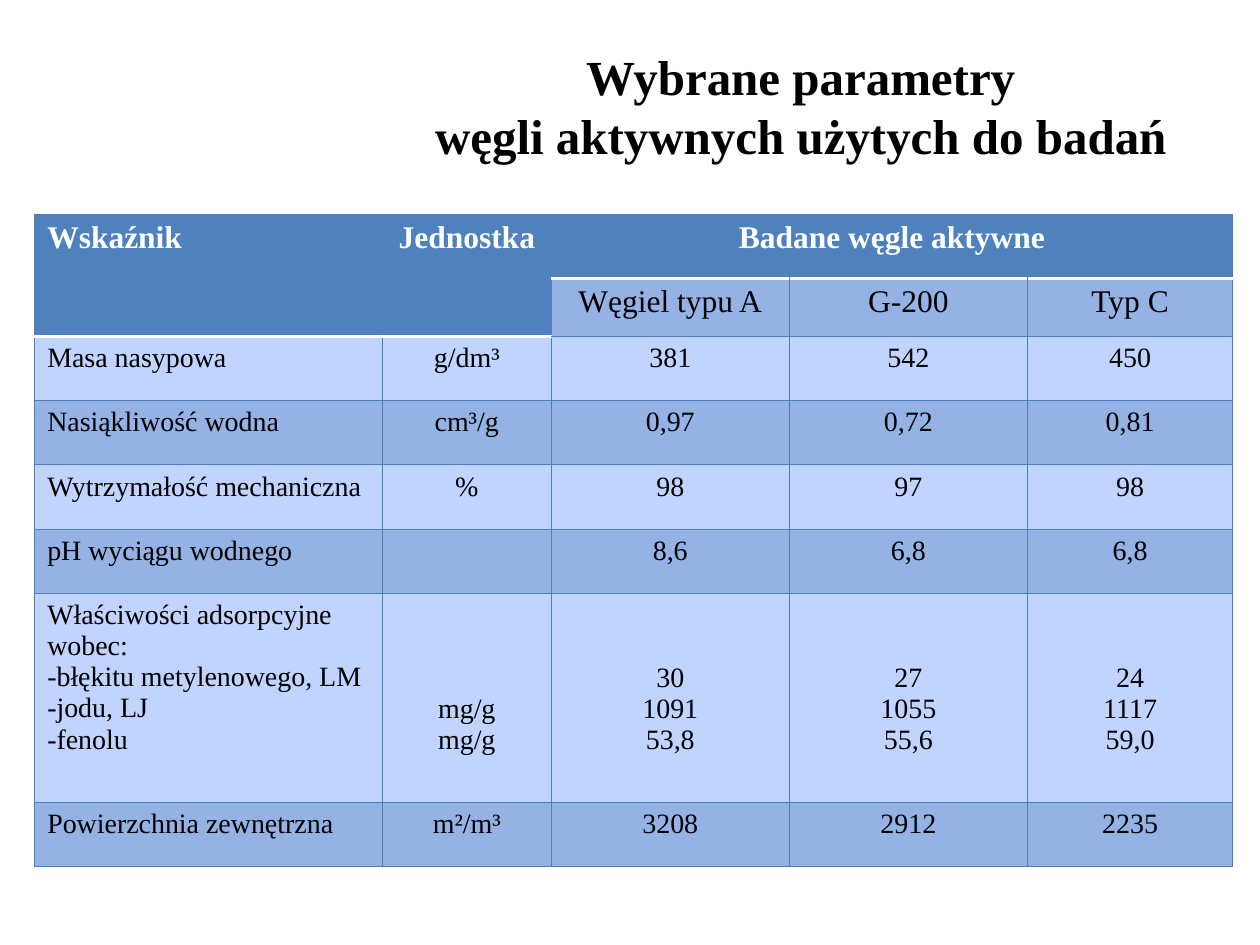
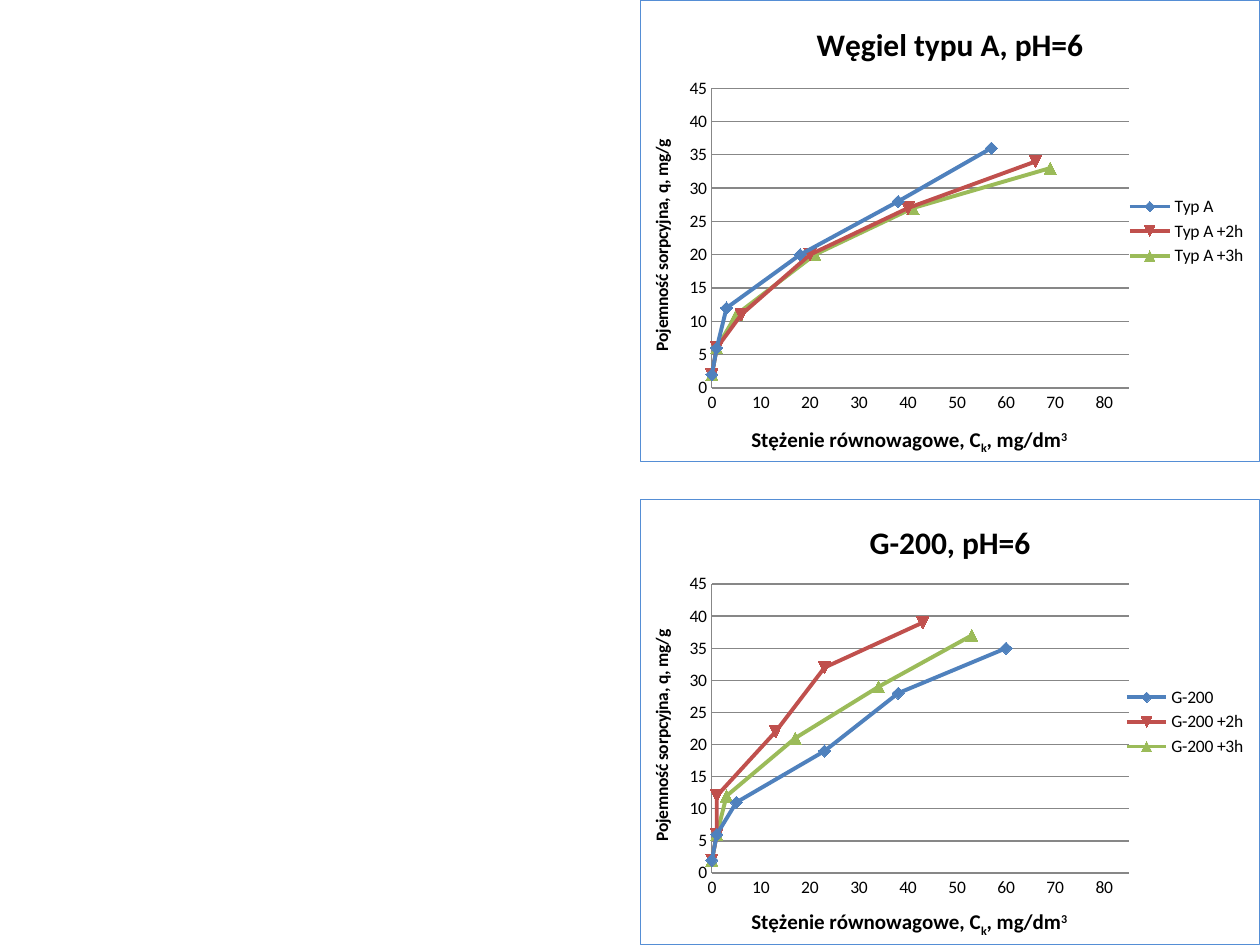
from lxml import etree
from pptx import Presentation
from pptx import util as u
from pptx.chart.data import XyChartData
from pptx.dml.color import RGBColor
from pptx.enum import chart as charts, text
from pptx.oxml import parse_xml
from pptx.oxml.ns import nsdecls, qn

BLACK = RGBColor(0x00, 0x00, 0x00)
WHITE = RGBColor(0xFF, 0xFF, 0xFF)
BLUE = RGBColor(0x4F, 0x81, 0xBD)
RED = RGBColor(0xC0, 0x50, 0x4D)
GREEN = RGBColor(0x9B, 0xBB, 0x59)
LIGHT_BAND = RGBColor(0xC0, 0xD4, 0xFF)
DARK_BAND = RGBColor(0x94, 0xB2, 0xE4)
CELL_LINE = RGBColor(0x4B, 0x7E, 0xBC)
CHART_LINE = RGBColor(0x55, 0x8E, 0xD5)
GRID_LINE = RGBColor(0x87, 0x87, 0x87)
SERIF, SANS = "Times New Roman", "Calibri"
CENTER, LEFT = text.PP_ALIGN.CENTER, text.PP_ALIGN.LEFT

CARBONS = ["Węgiel typu A", "G-200", "Typ C"]
COLUMN_WIDTHS = [27.6, 13.4, 18.9, 18.9, 16.3]
ROW_HEIGHTS = [5.1, 4.6, 5.1, 5.1, 5.1, 5.1, 16.6, 5.1]
LINE_HEIGHT = 2.48
PARAMETERS = [
    ["Masa nasypowa", "g/dm³", "381", "542", "450"],
    ["Nasiąkliwość wodna", "cm³/g", "0,97", "0,72", "0,81"],
    ["Wytrzymałość mechaniczna", "%", "98", "97", "98"],
    ["pH wyciągu wodnego", "", "8,6", "6,8", "6,8"],
    ["Właściwości adsorpcyjne wobec:\n-błękitu metylenowego, LM\n-jodu, LJ\n-fenolu",
     "mg/g\nmg/g", "30\n1091\n53,8", "27\n1055\n55,6", "24\n1117\n59,0"],
    ["Powierzchnia zewnętrzna", "m²/m³", "3208", "2912", "2235"],
]
ADSORPTION_LINES = 5

CONCENTRATION = [("Stężenie równowagowe, C", 0), ("k", -25000),
                 (", mg/dm", 0), ("3", 30000)]
CAPACITY = "Pojemność sorpcyjna, q, mg/g"
ISOTHERMS = {
    "Typ A": [([0, 1, 3, 18, 38, 57], [2, 6, 12, 20, 28, 36]),
              ([0, 1, 6, 20, 40, 66], [2, 6, 11, 20, 27, 34]),
              ([0, 1, 5, 21, 41, 69], [2, 6, 11, 20, 27, 33])],
    "G-200": [([0, 1, 5, 23, 38, 60], [2, 6, 11, 19, 28, 35]),
              ([0, 1, 1, 13, 23, 43], [2, 6, 12, 22, 32, 39]),
              ([0, 1, 3, 17, 34, 53], [2, 6, 12, 21, 29, 37])],
}


def grid(*units):
    """Lengths on a grid of 100 columns by 75 rows."""
    return [u.Inches(unit / 10) for unit in units]


def write(frame, lines, size=16, bold=False, color=BLACK, align=CENTER, font=SERIF):
    """Fill a frame; a line is a string or a list of (words, baseline shift)."""
    for index, line in enumerate(lines):
        para = frame.add_paragraph() if index else frame.paragraphs[0]
        para.alignment = align
        if isinstance(line, str):
            para.text = line
        else:
            for words, shift in line:
                span = para.add_run()
                span.text = words
                if shift:
                    span.font._element.set("baseline", str(shift))
        for span in para.runs:
            span.font.size, span.font.bold = u.Pt(size), bold
            span.font.name = font
            span.font.color.rgb = color


def add_title(page, words):
    box = page.shapes.add_textbox(*grid(27.2, 2.1, 72.7, 12.5))
    box.text_frame.word_wrap = True
    box.text_frame.vertical_anchor = text.MSO_ANCHOR.MIDDLE
    write(box.text_frame, [words], size=28, bold=True)


def set_borders(cell, top_white, bottom_white):
    properties = cell._tc.get_or_add_tcPr()
    edges = [("L", False), ("R", False), ("T", top_white), ("B", bottom_white)]
    for index, (side, white) in enumerate(edges):
        color, width = (WHITE, u.Pt(2)) if white else (CELL_LINE, u.Pt(0.75))
        properties.insert(index, parse_xml(
            f'<a:ln{side} {nsdecls("a")} w="{int(width)}"><a:solidFill>'
            f'<a:srgbClr val="{color}"/></a:solidFill></a:ln{side}>'))


def ends_header(row, column):
    return row == 0 or (row == 1 and column < 2)


def add_parameter_table(page):
    rows = [["Wskaźnik", "Jednostka", "Badane węgle aktywne", "", ""],
            ["", ""] + CARBONS] + PARAMETERS
    table = page.shapes.add_table(
        len(rows), len(COLUMN_WIDTHS),
        *grid(2.75, 17, sum(COLUMN_WIDTHS), sum(ROW_HEIGHTS))).table
    for column, width in zip(table.columns, grid(*COLUMN_WIDTHS)):
        column.width = width
    for row, height in zip(table.rows, grid(*ROW_HEIGHTS)):
        row.height = height
    for r, row in enumerate(rows):
        for c, words in enumerate(row):
            cell = table.cell(r, c)
            header = ends_header(r, c)
            cell.fill.solid()
            cell.fill.fore_color.rgb = (
                BLUE if header else DARK_BAND if r % 2 else LIGHT_BAND)
            set_borders(cell, r > 0 and ends_header(r - 1, c), header)
            if not words:
                continue
            lines = words.split("\n")
            write(cell.text_frame, lines, size=18 if r < 2 else 16, bold=header,
                  color=WHITE if header else BLACK, align=CENTER if c else LEFT)
            if c and len(lines) > 1:
                skipped = ADSORPTION_LINES - len(lines)
                cell.margin_top, = grid(0.5 + skipped * LINE_HEIGHT)
    for column in (0, 1):
        table.cell(0, column).merge(table.cell(1, column))
    table.cell(0, 2).merge(table.cell(0, 4))


def style_axis(axis, title, size, maximum, step):
    axis.minimum_scale, axis.maximum_scale = 0, maximum
    axis.major_unit = step
    axis.major_tick_mark = axis.minor_tick_mark = charts.XL_TICK_MARK.NONE
    axis.tick_labels.number_format = "0"
    axis.tick_labels.number_format_is_linked = False
    axis.format.line.color.rgb = GRID_LINE
    write(axis.axis_title.text_frame, [title], size=size, bold=True, font=SANS)


def frame_chart(chart):
    """Give the chart area its fill and border and the plot its fixed place."""
    space = chart._chartSpace
    space.find(qn("c:chart")).addnext(parse_xml(
        f'<c:spPr {nsdecls("c", "a")}><a:solidFill><a:srgbClr val="{WHITE}"/>'
        f'</a:solidFill><a:ln w="{int(u.Pt(0.75))}"><a:solidFill>'
        f'<a:srgbClr val="{CHART_LINE}"/></a:solidFill></a:ln></c:spPr>'))
    plot_area = space.find(qn("c:chart")).find(qn("c:plotArea"))
    for old in plot_area.findall(qn("c:layout")):
        plot_area.remove(old)
    layout = parse_xml(f'<c:layout {nsdecls("c")}><c:manualLayout/></c:layout>')
    settings = {"layoutTarget": "inner", "xMode": "edge", "yMode": "edge",
                "x": 0.115, "y": 0.19, "w": 0.674, "h": 0.65}
    for name, value in settings.items():
        etree.SubElement(layout[0], qn(f"c:{name}")).set("val", str(value))
    plot_area.insert(0, layout)


def add_isotherms(page, carbon, title, top, height):
    data = XyChartData()
    for suffix, (xs, ys) in zip(["", " +2h", " +3h"], ISOTHERMS[carbon]):
        series = data.add_series(carbon + suffix)
        for x, y in zip(xs, ys):
            series.add_data_point(x, y)
    chart = page.shapes.add_chart(charts.XL_CHART_TYPE.XY_SCATTER_LINES,
                                  *grid(50.8, top, 49.2, height), data).chart
    chart.font.name, chart.font.size = SANS, u.Pt(10)
    chart.font.color.rgb = BLACK
    write(chart.chart_title.text_frame, [f"{title}, pH=6"], size=18, bold=True, font=SANS)
    chart.has_legend = True
    chart.legend.position = charts.XL_LEGEND_POSITION.RIGHT
    chart.legend.include_in_layout = False
    style_axis(chart.category_axis, CONCENTRATION, 12, 85, 10)
    style_axis(chart.value_axis, CAPACITY, 10, 45, 5)
    chart.value_axis.axis_title.text_frame._txBody.bodyPr.set("rot", "-5400000")
    chart.category_axis.has_major_gridlines = False
    chart.value_axis.major_gridlines.format.line.color.rgb = GRID_LINE
    chart.plots[0].vary_by_categories = False
    for series, color in zip(chart.plots[0].series, [BLUE, RED, GREEN]):
        series.smooth = False
        series.format.line.color.rgb = color
        series.format.line.width = u.Pt(2.25)
        series.marker.size = 7
        series.marker.format.fill.solid()
        series.marker.format.fill.fore_color.rgb = color
        series.marker.format.line.color.rgb = color
    frame_chart(chart)


def main():
    deck = Presentation()
    deck.slide_width, deck.slide_height = grid(100, 75)
    blank = deck.slide_layouts[6]

    page = deck.slides.add_slide(blank)
    add_title(page, "Wybrane parametry\vwęgli aktywnych użytych do badań")
    add_parameter_table(page)

    page = deck.slides.add_slide(blank)
    add_isotherms(page, "Typ A", CARBONS[0], 0, 36.7)
    add_isotherms(page, "G-200", CARBONS[1], 39.6, 35.4)
    deck.save("out.pptx")


if __name__ == "__main__":
    main()
